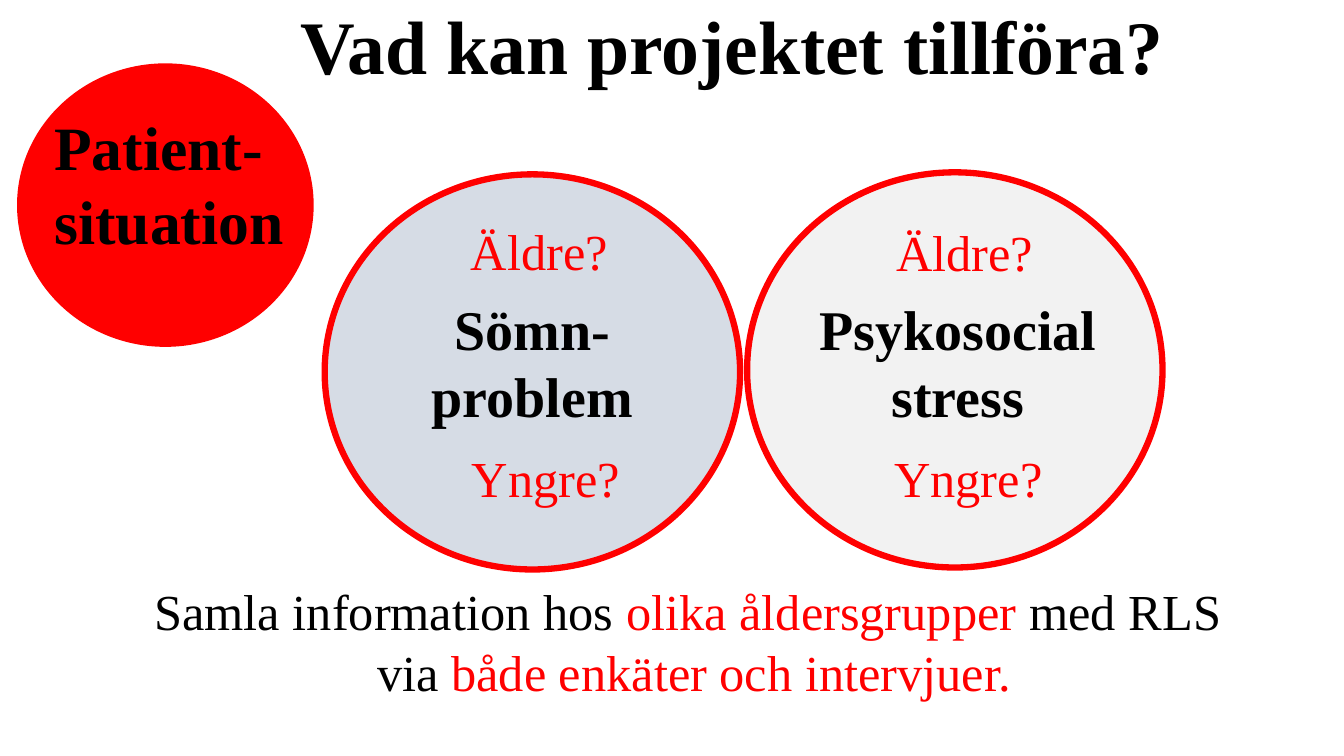
from dataclasses import dataclass

from pptx import Presentation
from pptx.dml.color import RGBColor
from pptx.enum.shapes import MSO_SHAPE as Preset
from pptx.enum.text import MSO_ANCHOR as Anchor, PP_ALIGN as Align
from pptx.slide import Slide
from pptx.util import Inches, Pt

RED = RGBColor(0xFF, 0x00, 0x00)
BLACK = RGBColor(0x00, 0x00, 0x00)
BLUE_GREY = RGBColor(0xD6, 0xDC, 0xE5)
LIGHT_GREY = RGBColor(0xF2, 0xF2, 0xF2)

Box = tuple[float, float, float, float]
Run = tuple[str, RGBColor]


@dataclass(frozen=True)
class Circle:
    box: Box
    fill: RGBColor


@dataclass(frozen=True)
class Label:
    box: Box
    lines: list[list[Run]]
    size: int
    bold: bool = False
    align: Align = Align.LEFT
    wrap: bool = True
    anchor: Anchor = Anchor.TOP
    spacing: float = 1.0


@dataclass(frozen=True)
class Theme:
    circle: Circle
    heading: Label
    older: Box
    younger: Box


def heading(left: float, *lines: str) -> Label:
    return Label((left, 2.87, 3.6, 1.45), [[(line, BLACK)] for line in lines],
                 40, bold=True, align=Align.CENTER)


def draw_circle(slide: Slide, circle: Circle) -> None:
    oval = slide.shapes.add_shape(Preset.OVAL, *map(Inches, circle.box))
    oval.shadow.inherit = False
    oval.fill.solid()
    oval.fill.fore_color.rgb = circle.fill
    oval.line.color.rgb = RED
    oval.line.width = Pt(4.5)


def draw_label(slide: Slide, label: Label) -> None:
    frame = slide.shapes.add_textbox(*map(Inches, label.box)).text_frame
    frame_format = {"word_wrap": label.wrap, "vertical_anchor": label.anchor}
    for name, value in frame_format.items():
        setattr(frame, name, value)
    font_format = {"name": "Times New Roman", "size": Pt(label.size), "bold": label.bold}
    for index, line in enumerate(label.lines):
        paragraph = frame.add_paragraph() if index else frame.paragraphs[0]
        paragraph_format = {"alignment": label.align, "line_spacing": label.spacing}
        for name, value in paragraph_format.items():
            setattr(paragraph, name, value)
        for text, color in line:
            run = paragraph.add_run()
            run.text = text
            for name, value in font_format.items():
                setattr(run.font, name, value)
            run.font.color.rgb = color


def draw_theme(slide: Slide, theme: Theme) -> None:
    draw_circle(slide, theme.circle)
    draw_label(slide, theme.heading)
    for text, box in (("Äldre?", theme.older), ("Yngre?", theme.younger)):
        draw_label(slide, Label(box, [[(text, RED)]], 36, wrap=False))


THEMES = [
    Theme(Circle((7.41, 1.71, 4.12, 3.92), LIGHT_GREY),
          heading(7.7, "Psykosocial stress"),
          (8.79, 2.14, 1.58, 0.71), (8.77, 4.39, 1.69, 0.71)),
    Theme(Circle((3.22, 1.73, 4.12, 3.92), BLUE_GREY),
          heading(3.48, "Sömn-", "problem"),
          (4.57, 2.13, 1.58, 0.71), (4.58, 4.39, 1.69, 0.71)),
]

PATIENT_CIRCLE = Circle((0.2, 0.66, 2.88, 2.75), RED)

LABELS = [
    Label((0.3, 5.71, 13.17, 1.31),
          [[("Samla information hos ", BLACK), ("olika åldersgrupper ", RED), ("med RLS ", BLACK)],
           [("via ", BLACK), ("både enkäter och intervjuer.", RED)]],
          36, align=Align.CENTER),
    Label((1.51, -0.23, 11.5, 1.45), [[("Vad kan projektet tillföra?", BLACK)]],
          54, bold=True, align=Align.CENTER, anchor=Anchor.MIDDLE, spacing=0.9),
    Label((0.44, 1.03, 2.5, 1.58), [[("Patient-", BLACK)], [("situation", BLACK)]],
          44, bold=True, wrap=False),
]


def main() -> None:
    presentation = Presentation()
    presentation.slide_width = Inches(13.33)
    presentation.slide_height = Inches(7.5)
    slide = presentation.slides.add_slide(presentation.slide_layouts[6])
    for theme in THEMES:
        draw_theme(slide, theme)
    draw_circle(slide, PATIENT_CIRCLE)
    for label in LABELS:
        draw_label(slide, label)
    presentation.save("out.pptx")


if __name__ == "__main__":
    main()
